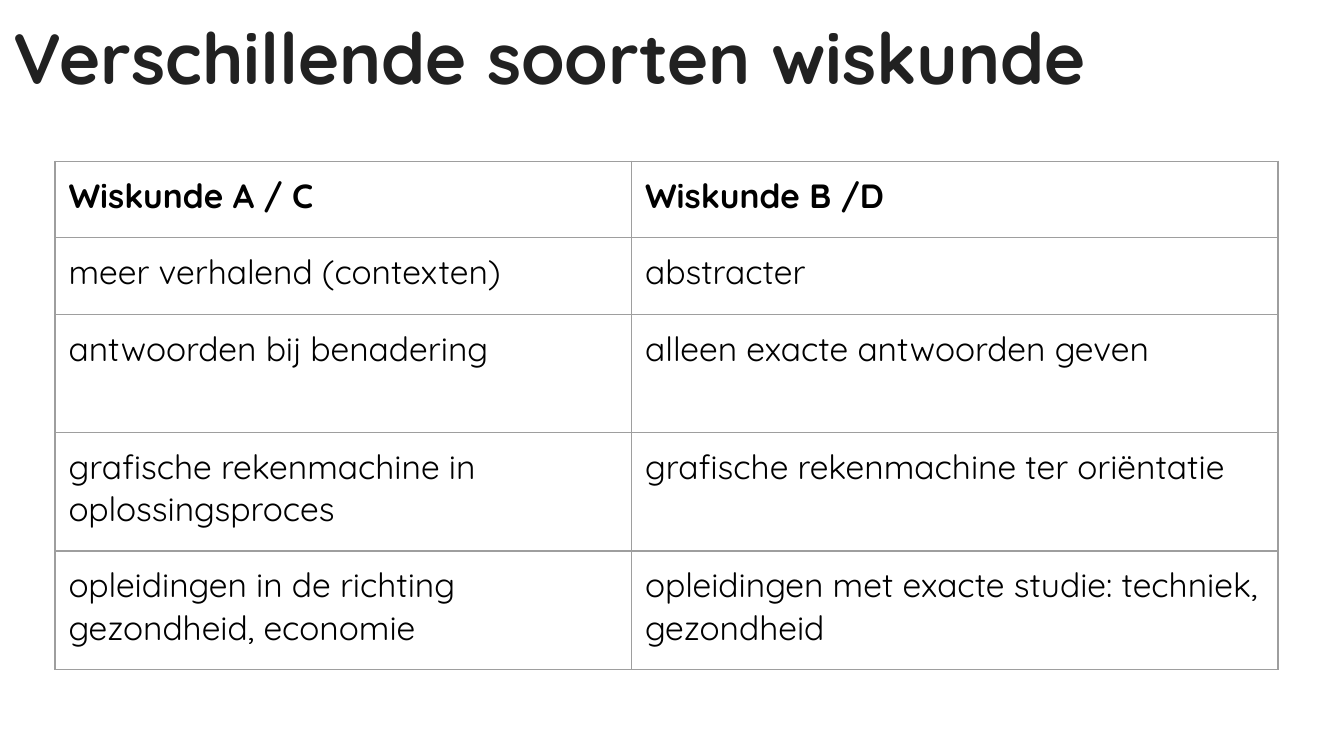
from typing import NamedTuple

from lxml import etree
from pptx import Presentation
from pptx import util as u
from pptx.dml.color import RGBColor
from pptx.enum import text
from pptx.oxml.ns import qn

# Widescreen slide, 16:9
SLIDE_WIDTH = u.Inches(10)
SLIDE_HEIGHT = u.Emu(SLIDE_WIDTH * 9 // 16)
FONT = "Quicksand"
COLORS = {"title": "212121", "body": "000000", "border": "9E9E9E"}
INSET = u.Inches(0.1)
BORDER_WIDTH = u.Pt(0.75)
COLUMN_WIDTHS = (4.29, 4.81)
SINGLE_ROW, DOUBLE_ROW = 0.57, 0.88


class Comparison(NamedTuple):
    left: str
    right: str
    height: float
    bold: bool = False


COMPARISONS = [
    Comparison("Wiskunde A / C", "Wiskunde B /D", SINGLE_ROW, bold=True),
    Comparison("meer verhalend (contexten)", "abstracter", SINGLE_ROW),
    Comparison("antwoorden bij benadering", "alleen exacte antwoorden geven", DOUBLE_ROW),
    Comparison("grafische rekenmachine in oplossingsproces",
               "grafische rekenmachine ter oriëntatie", DOUBLE_ROW),
    Comparison("opleidingen in de richting gezondheid, economie",
               "opleidingen met exacte studie: techniek, gezondheid", DOUBLE_ROW),
]


def write_text(holder, content: str, *, size: float, color: str, bold: bool = False) -> None:
    """Write one formatted paragraph into a text frame or table cell."""
    holder.margin_left = holder.margin_right = INSET
    holder.margin_top = holder.margin_bottom = INSET
    holder.vertical_anchor = text.MSO_ANCHOR.TOP
    holder.word_wrap = True
    frame = getattr(holder, "text_frame", holder)
    paragraph = frame.paragraphs[0]
    paragraph.alignment = text.PP_ALIGN.LEFT
    run = paragraph.add_run()
    run.text = content
    run.font.name = FONT
    run.font.size = u.Pt(size)
    run.font.bold = bold
    run.font.color.rgb = RGBColor.from_string(COLORS[color])


def outline_cell(cell) -> None:
    """Draw the four borders; they must precede the fill in the XML."""
    properties = cell._tc.get_or_add_tcPr()
    for position, side in enumerate(("lnL", "lnR", "lnT", "lnB")):
        line = etree.Element(qn(f"a:{side}"), w=str(int(BORDER_WIDTH)))
        fill = etree.SubElement(line, qn("a:solidFill"))
        etree.SubElement(fill, qn("a:srgbClr"), val=COLORS["border"])
        properties.insert(position, line)


def add_title(slide) -> None:
    box = slide.shapes.add_textbox(0, 0, u.Inches(9.32), u.Inches(0.88))
    write_text(box.text_frame, "Verschillende soorten wiskunde",
               size=38, color="title", bold=True)


def add_comparison_table(slide, comparisons: list[Comparison]) -> None:
    heights = [comparison.height for comparison in comparisons]
    table = slide.shapes.add_table(
        len(comparisons), len(COLUMN_WIDTHS), u.Inches(0.41), u.Inches(1.2),
        u.Inches(sum(COLUMN_WIDTHS)), u.Inches(sum(heights))).table
    table.first_row = table.horz_banding = False
    for column, width in zip(table.columns, COLUMN_WIDTHS):
        column.width = u.Inches(width)
    for row, comparison in zip(table.rows, comparisons):
        row.height = u.Inches(comparison.height)
        for cell, content in zip(row.cells, (comparison.left, comparison.right)):
            write_text(cell, content, size=18, color="body", bold=comparison.bold)
            cell.fill.background()
            outline_cell(cell)


def main() -> None:
    presentation = Presentation()
    presentation.slide_width, presentation.slide_height = SLIDE_WIDTH, SLIDE_HEIGHT
    slide = presentation.slides.add_slide(presentation.slide_layouts[6])
    add_title(slide)
    add_comparison_table(slide, COMPARISONS)
    presentation.save("out.pptx")


if __name__ == "__main__":
    main()
